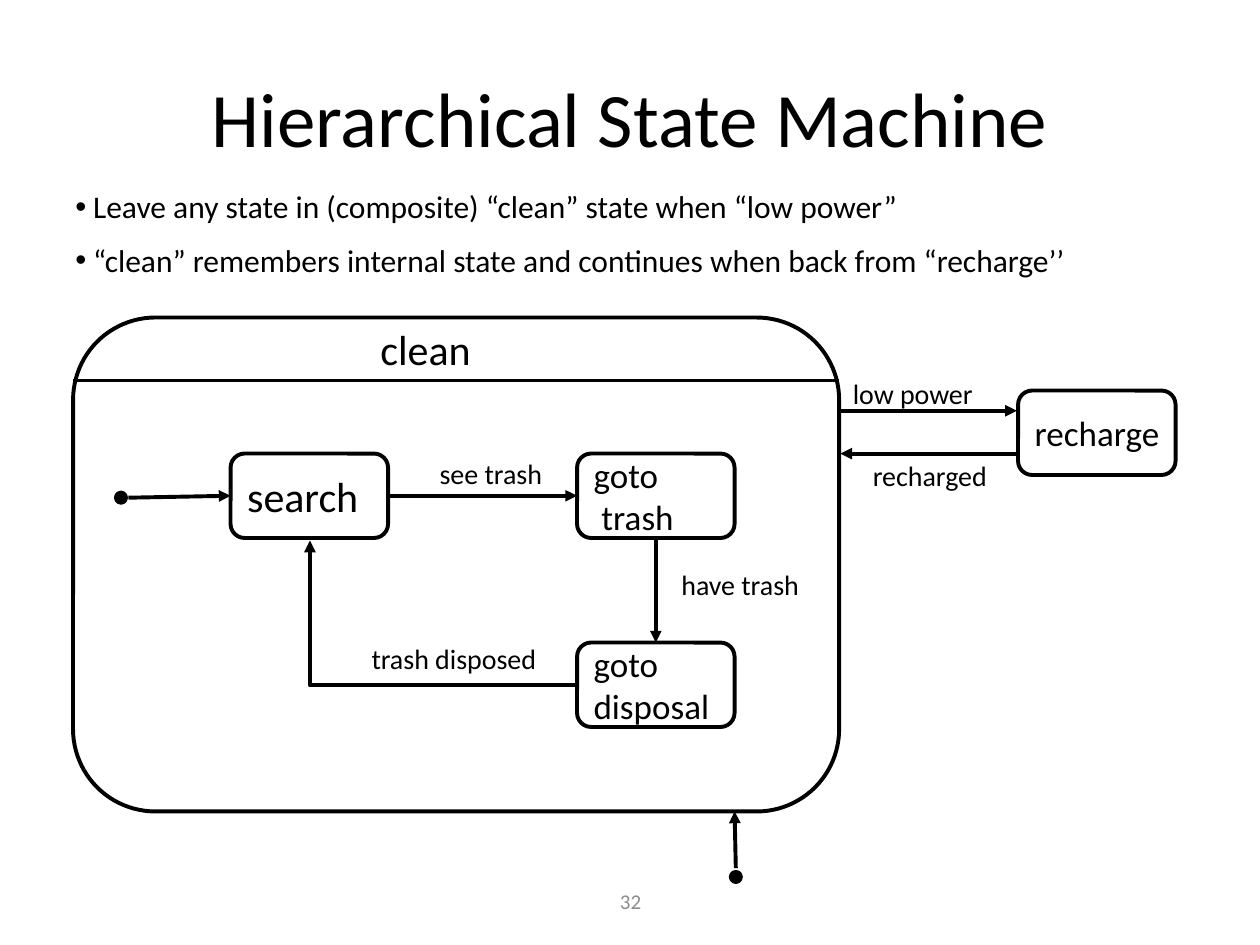
from lxml.etree import SubElement
from pptx import Presentation
from pptx.dml.color import RGBColor
from pptx.enum.shapes import MSO_CONNECTOR as CXN, MSO_SHAPE as SHAPE
from pptx.enum.text import MSO_ANCHOR as ANCHOR, MSO_AUTO_SIZE as AUTO, PP_ALIGN as ALIGN
from pptx.oxml.ns import qn
from pptx.util import Inches, Pt

BLACK = RGBColor(0x00, 0x00, 0x00)
GRAY = RGBColor(0x8C, 0x8C, 0x8C)
FONT = "Calibri"
TOP, LEFT, BOTTOM, RIGHT = range(4)

TITLE = "Hierarchical State Machine"
PAGE = "32"
BULLETS = [
    "Leave any state in (composite) “clean” state when “low power”",
    "“clean” remembers internal state and continues when back from “recharge’’",
]
STATE_SIZE = (1.25, 0.67)
STATES = {  # name: (left, top, font size, lines)
    "search": (1.83, 3.6, 24, ["search"]),
    "disposal": (4.58, 5.1, 20, ["goto", "disposal"]),
    "trash": (4.58, 3.6, 20, ["goto", " trash"]),
    "recharge": (8.08, 3.1, 20, ["recharge"]),
}
CLEAN = (0.58, 2.52, 6.08, 3.92)
DOT = 0.08
DOTS = [(0.92, 3.91), (5.8, 6.92)]
LABELS = [  # text, left, top, width
    ("see trash", 3.39, 3.57, 1.12),
    ("trash disposed", 2.85, 5.04, 1.65),
    ("have trash", 5.31, 4.45, 1.24),
    ("low power", 6.67, 2.94, 1.2),
    ("recharged", 6.83, 3.59, 1.2),
]
# start, end, (state, side) joined at start, (state, side) joined at end
TRANSITIONS = [
    ((1.02, 3.95), (1.83, 3.94), None, ("search", LEFT)),
    ((3.08, 3.94), (4.58, 3.94), ("search", RIGHT), ("trash", LEFT)),
    ((5.21, 4.27), (5.21, 5.1), ("trash", BOTTOM), ("disposal", TOP)),
    ((5.84, 6.89), (5.83, 6.44), None, None),
    ((6.67, 3.26), (8.07, 3.26), None, None),
    ((8.07, 3.6), (6.67, 3.6), None, None),
]

prs = Presentation()
prs.slide_width, prs.slide_height = Inches(10), Inches(7.5)
shapes = prs.slides.add_slide(prs.slide_layouts[6]).shapes


def write(sp, lines, size, color=BLACK, align=ALIGN.LEFT, wrap=False, before=0):
    tf = sp.text_frame
    tf.word_wrap = wrap
    tf.vertical_anchor = ANCHOR.MIDDLE
    for i, line in enumerate(lines):
        p = tf.paragraphs[0] if i == 0 else tf.add_paragraph()
        p.alignment = align
        p.space_before = Pt(before)
        r = p.add_run()
        r.text = line
        r.font.name, r.font.size = FONT, Pt(size)
        r.font.color.rgb = color
    return tf


def add_text(box, lines, size, grow=False, **style):
    sp = shapes.add_textbox(*map(Inches, box))
    tf = write(sp, lines, size, **style)
    tf.auto_size = AUTO.SHAPE_TO_FIT_TEXT if grow else AUTO.NONE
    return tf


def add_outline(kind, box, filled=False):
    sp = shapes.add_shape(kind, *map(Inches, box))
    sp.shadow.inherit = False
    if filled:
        sp.fill.solid()
        sp.fill.fore_color.rgb = BLACK
    else:
        sp.fill.background()
    sp.line.color.rgb, sp.line.width = BLACK, Pt(2.25)
    return sp


def add_line(start, end, kind=CXN.STRAIGHT, arrow=True):
    cxn = shapes.add_connector(kind, *map(Inches, start + end))
    cxn.line.color.rgb, cxn.line.width = BLACK, Pt(2.25)
    if arrow:
        SubElement(cxn.line._get_or_add_ln(), qn("a:tailEnd"), type="triangle")
    SubElement(cxn._element.spPr, qn("a:effectLst"))
    return cxn


def add_bullets(tf, indent=0.14):
    for p in tf.paragraphs:
        pPr = p._p.get_or_add_pPr()
        pPr.set("marL", str(Inches(indent)))
        pPr.set("indent", str(-Inches(indent)))
        SubElement(pPr, qn("a:buFont"), typeface="Arial")
        SubElement(pPr, qn("a:buChar"), char="•")


add_text((3.42, 6.95, 3.17, 0.4), [PAGE], 12, color=GRAY, align=ALIGN.CENTER, wrap=True)
add_text((0.5, 0.3, 9, 1.25), [TITLE], 44, align=ALIGN.CENTER, wrap=True)

left, top, width, height = CLEAN
add_outline(SHAPE.ROUNDED_RECTANGLE, CLEAN)
add_line((left, top + 0.5), (left + width, top + 0.5), arrow=False)
add_text((2.92, top, 1, 0.5), ["clean"], 24, grow=True, before=12)

states = {}
for name, (x, y, size, lines) in STATES.items():
    states[name] = add_outline(SHAPE.ROUNDED_RECTANGLE, (x, y, *STATE_SIZE))
    write(states[name], lines, size)

for x, y in DOTS:
    add_outline(SHAPE.OVAL, (x, y, DOT, DOT), filled=True)

for start, end, source, target in TRANSITIONS:
    cxn = add_line(start, end)
    if source:
        cxn.begin_connect(states[source[0]], source[1])
    if target:
        cxn.end_connect(states[target[0]], target[1])

back_to_search = add_line((4.57, 5.44), (2.46, 4.29), CXN.ELBOW)
back_to_search._element.spPr.find(qn("a:prstGeom")).set("prst", "bentConnector2")

for text, x, y, w in LABELS:
    add_text((x, y, w, 0.37), [text], 16, grow=True)

add_bullets(add_text((0.5, 1.42, 8.25, 0.86), BULLETS, 18, grow=True, before=9))

prs.save("out.pptx")
